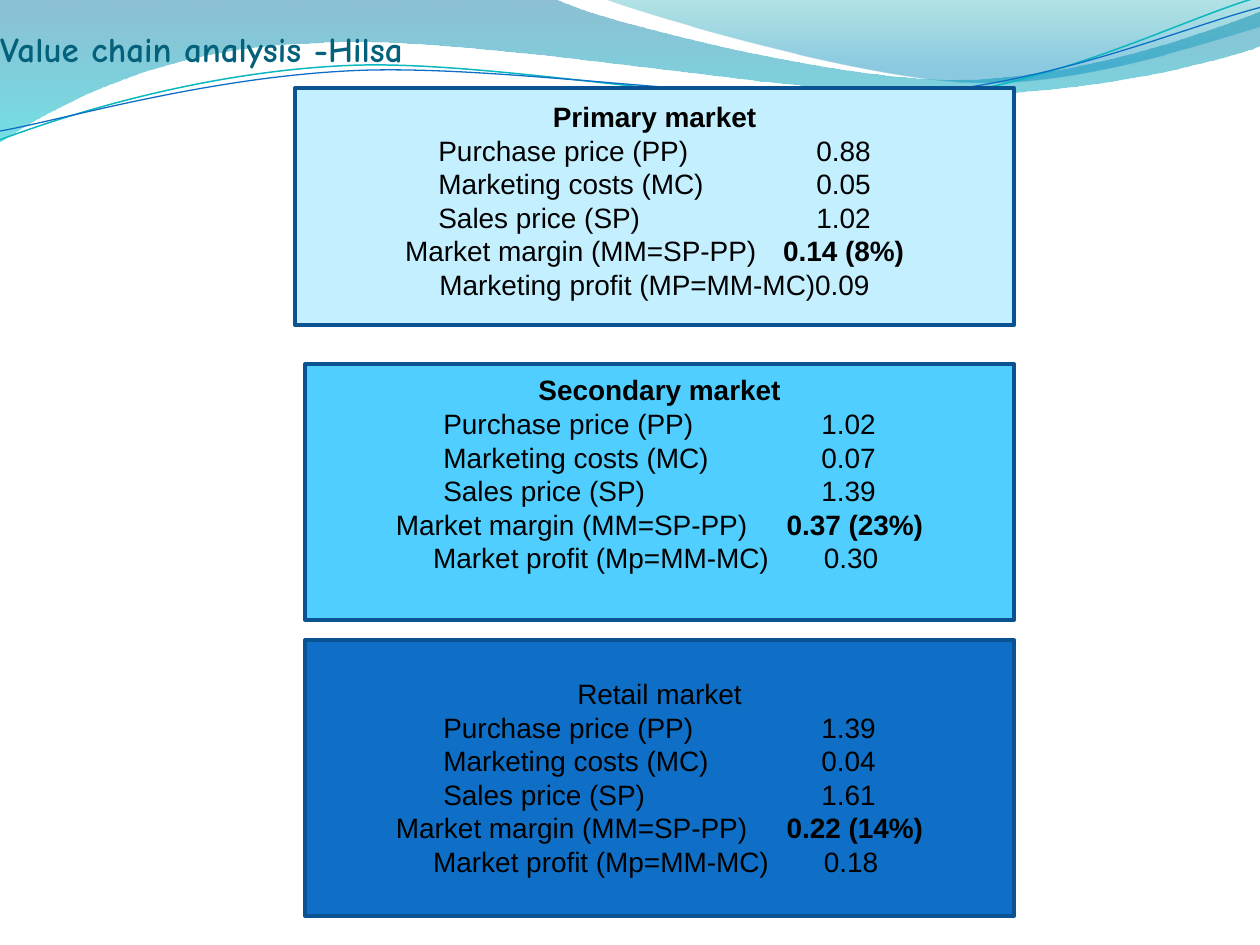
import pptx
import pptx.dml.color
import pptx.enum.shapes
import pptx.enum.text
import pptx.oxml
import pptx.oxml.ns
import pptx.util

RGBColor = pptx.dml.color.RGBColor
TITLE_TEAL = RGBColor(0x04, 0x61, 0x7B)
BLACK = RGBColor(0x00, 0x00, 0x00)
BORDER_BLUE = RGBColor(0x0B, 0x52, 0x92)
PALE_BLUE = RGBColor(0xC4, 0xEF, 0xFF)
SKY_BLUE = RGBColor(0x4F, 0xCE, 0xFF)
DEEP_BLUE = RGBColor(0x0F, 0x6F, 0xC6)
BRIGHT_TEAL = RGBColor(0x0A, 0xB8, 0xBF)
WAVE_BLUE = RGBColor(0x00, 0x74, 0xA1)
WAVE_CYAN = RGBColor(0x00, 0xC6, 0xCF)
WAVE_TEAL = RGBColor(0x00, 0xA1, 0xA9)
WAVE_AZURE = RGBColor(0x00, 0x8B, 0xBF)
NAMESPACE = pptx.oxml.ns.nsdecls("a")

presentation = pptx.Presentation()
presentation.slide_width = pptx.util.Inches(10)
presentation.slide_height = pptx.util.Inches(7.5)
COLUMN = presentation.slide_width / 10
ROW = presentation.slide_height / 7.5
slide = presentation.slides.add_slide(presentation.slide_layouts[5])
shapes = slide.shapes


def add_curve(start, segments, closed):
    anchors = [(round(x * COLUMN), round(y * ROW))
               for x, y in [start] + [segment[-1] for segment in segments]]
    builder = shapes.build_freeform(*anchors[0], scale=1.0)
    builder.add_line_segments(anchors[1:], close=closed)
    shape = builder.convert_to_shape()
    shape.shadow.inherit = False
    for line, segment in zip(shape._element.xpath(".//a:lnTo"), segments):
        if len(segment) == 3:
            points = "".join(
                f'<a:pt x="{round(x * COLUMN) - shape.left}" y="{round(y * ROW) - shape.top}"/>'
                for x, y in segment)
            line.getparent().replace(line, pptx.oxml.parse_xml(
                f"<a:cubicBezTo {NAMESPACE}>{points}</a:cubicBezTo>"))
    return shape


def set_format(target, values):
    for name, value in values.items():
        setattr(target, name, value)


waves = [
    ((0, 0), [
        ((4.4, -0.01),),
        ((4.76, 0.17), (6.64, 0.63), (7.58, 0.63)),
        ((8.53, 0.63), (9.58, 0.26), (10, 0.09)),
        ((10.01, 0.36),),
        ((9.83, 0.44), (8.7, 0.76), (7.46, 0.75)),
        ((6.22, 0.75), (3.82, 0.28), (2.57, 0.34)),
        ((1.29, 0.36), (0.46, 0.83), (-0.01, 1.13)),
    ], [(0, WAVE_BLUE, 45), (1, WAVE_CYAN, 55)]),
    ((4.79, -0.01), [
        ((5.09, 0.11), (6.82, 0.62), (7.69, 0.65)),
        ((8.56, 0.69), (9.61, 0.32), (10, 0.21)),
        ((10, 0),),
    ], [(0, WAVE_TEAL, 30), (0.8, WAVE_AZURE, 45)]),
]
for start, segments, stops in waves:
    wave = add_curve(start, segments, True)
    wave.line.fill.background()
    wave.fill.gradient()
    wave.fill.gradient_angle = 270
    for stop, (position, color, opacity) in zip(wave.fill.gradient_stops, stops):
        stop.position = position
        stop.color.rgb = color
    for color_element, stop in zip(wave._element.xpath(".//a:gs/a:srgbClr"), stops):
        color_element.append(pptx.oxml.parse_xml(
            f'<a:alpha {NAMESPACE} val="{stop[2] * 1000}"/>'))

ribbons = [
    ((0, 1.11), [
        ((0.48, 0.93), (1.58, 0.57), (2.77, 0.52)),
        ((3.95, 0.47), (5.93, 0.89), (7.13, 0.8)),
        ((8.33, 0.71), (9.38, 0.15), (9.98, -0.02)),
    ], BRIGHT_TEAL, 0.85),
    ((0, 1.04), [
        ((0.47, 0.96), (1.64, 0.61), (2.83, 0.56)),
        ((4.03, 0.51), (5.97, 0.84), (7.17, 0.75)),
        ((8.36, 0.67), (9.41, 0.21), (10, 0.06)),
    ], DEEP_BLUE, 0.75),
]
for start, segments, color, width in ribbons:
    ribbon = add_curve(start, segments, False)
    ribbon.fill.background()
    ribbon.line.color.rgb = color
    ribbon.line.width = pptx.util.Pt(width)

title = shapes.title
shapes._spTree.append(title._element)
set_format(title, {"left": 0, "top": 0, "width": int(3.83 * COLUMN), "height": int(0.55 * ROW)})
title.text_frame.text = "Value chain analysis -Hilsa"
set_format(title.text_frame, {
    "margin_left": 0, "margin_right": 0, "margin_bottom": 0,
    "margin_top": int(0.05 * ROW), "word_wrap": True,
    "auto_size": pptx.enum.text.MSO_AUTO_SIZE.NONE,
    "vertical_anchor": pptx.enum.text.MSO_ANCHOR.BOTTOM,
})
title_paragraph = title.text_frame.paragraphs[0]
title_paragraph.alignment = pptx.enum.text.PP_ALIGN.LEFT
title_font = title_paragraph.runs[0].font
set_format(title_font, {"name": "Comic Neue", "size": pptx.util.Pt(20), "bold": True})
title_font.color.rgb = TITLE_TEAL

price_labels = ["Purchase price (PP)\t", "Marketing costs (MC)\t", "Sales price (SP)\t",
                "Market margin (MM=SP-PP)\t"]
first_labels = price_labels + ["Marketing profit (MP=MM-MC)"]
later_labels = price_labels + ["Market profit (Mp=MM-MC)\t"]
markets = [
    ("Primary market", True, (2.34, 0.7, 5.71, 1.88), 0.09, PALE_BLUE, first_labels, 3,
     ["0.88", "0.05", "1.02", "0.14 (8%)", "0.09"]),
    ("Secondary market", True, (2.42, 2.89, 5.63, 2.03), 0.07, SKY_BLUE, later_labels, 3.1,
     ["1.02", "0.07", "1.39", "0.37 (23%)", "0.30 "]),
    ("Retail market", False, (2.42, 5.08, 5.63, 2.19), 0.29, DEEP_BLUE, later_labels, 3.1,
     ["1.39", "0.04", "1.61", "0.22 (14%)", "0.18 "]),
]
for heading, heading_bold, (left, top, width, height), inset, color, labels, wide_tab, values in markets:
    box = shapes.add_shape(
        pptx.enum.shapes.MSO_SHAPE.RECTANGLE,
        int(left * COLUMN), int(top * ROW), int(width * COLUMN), int(height * ROW))
    box.shadow.inherit = False
    box.fill.solid()
    box.fill.fore_color.rgb = color
    box.line.color.rgb = BORDER_BLUE
    box.line.width = pptx.util.Pt(2)
    frame = box.text_frame
    set_format(frame, {
        "word_wrap": True, "margin_top": int(inset * ROW), "margin_bottom": 0,
        "vertical_anchor": pptx.enum.text.MSO_ANCHOR.TOP,
    })
    lines = [[(heading, heading_bold)]]
    for label, value in zip(labels, values):
        if "%" in value:
            lines.append([(label, False), (value, True)])
        else:
            lines.append([(label + value, False)])
    for index, line in enumerate(lines):
        paragraph = frame.paragraphs[0] if index == 0 else frame.add_paragraph()
        set_format(paragraph, {
            "alignment": pptx.enum.text.PP_ALIGN.CENTER, "line_spacing": pptx.util.Pt(19.2)})
        tab = int((wide_tab if index > 3 else 3) * COLUMN)
        paragraph._p.get_or_add_pPr().append(pptx.oxml.parse_xml(
            f'<a:tabLst {NAMESPACE}><a:tab pos="{tab}" algn="l"/></a:tabLst>'))
        for text, bold in line:
            run = paragraph.add_run()
            run.text = text
            set_format(run.font, {"name": "Arial", "size": pptx.util.Pt(16), "bold": bold})
            run.font.color.rgb = BLACK

presentation.save("out.pptx")
